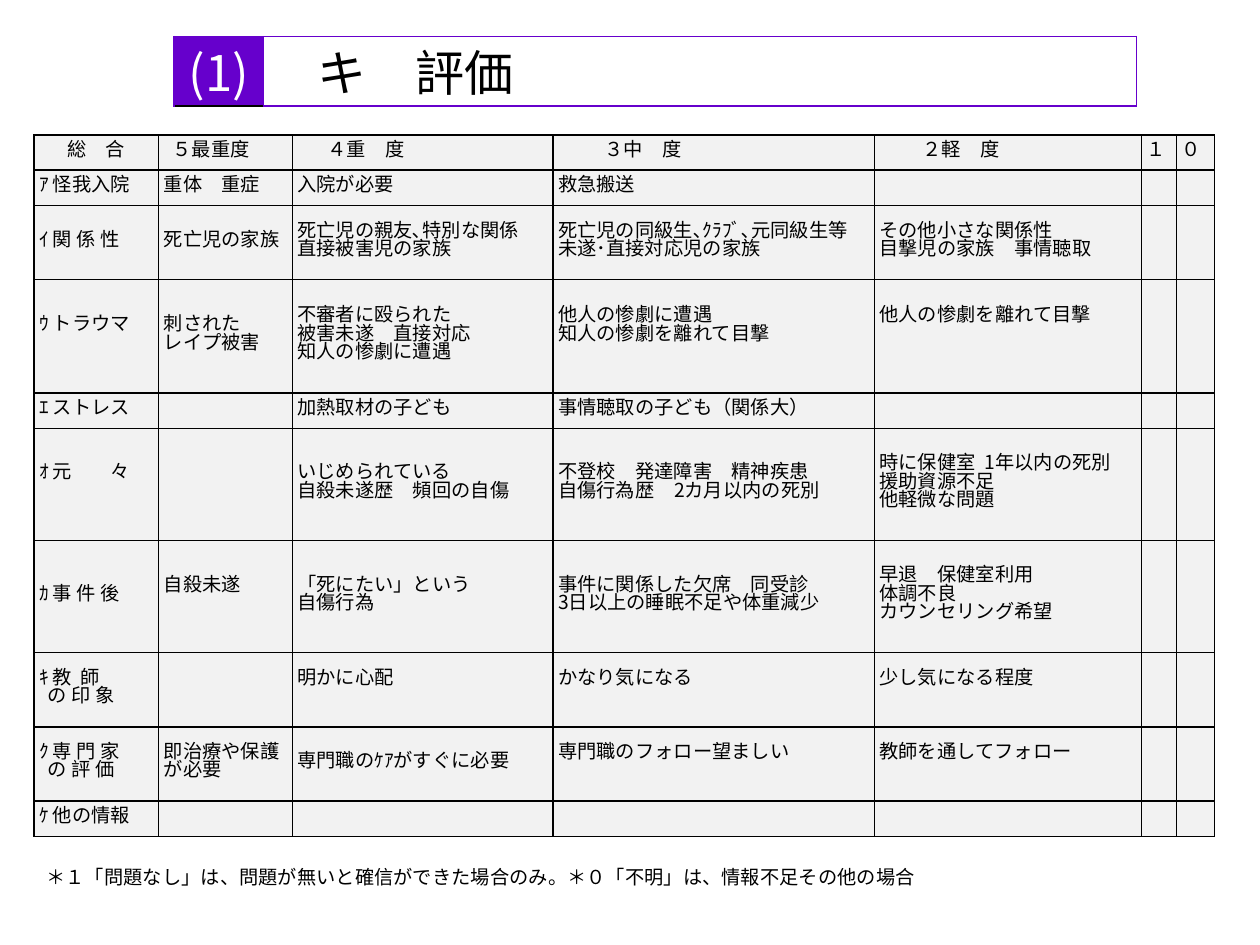
"""Build a slide with a heading band, a severity rating table and a footnote."""
from lxml.etree import SubElement
from pptx import Presentation
from pptx.dml.color import RGBColor
from pptx.enum.text import MSO_ANCHOR, PP_ALIGN
from pptx.oxml.ns import qn
from pptx.util import Inches, Pt

HUE = {"ink": "000000", "band": "6600CC", "pale": "F2F2F2", "white": "FFFFFF"}
CJK = "Noto Sans CJK JP"
LINE = 10.4
PAD = 0.04

HEAD = ["(1)", "キ　評価"]
ROWS = [
    ["総　合", "５最重度", "４重　度", "３中　度", "２軽　度", "１", "０"],
    ["ｱ 怪我入院", "重体　重症", "入院が必要", "救急搬送"],
    ["ｲ 関 係 性", "死亡児の家族", "死亡児の親友､特別な関係\n直接被害児の家族",
     "死亡児の同級生､ｸﾗﾌﾞ､元同級生等\n未遂･直接対応児の家族",
     "その他小さな関係性\n目撃児の家族　事情聴取"],
    ["ｳ トラウマ", "刺された\nレイプ被害",
     "不審者に殴られた\n被害未遂　直接対応\n知人の惨劇に遭遇",
     "他人の惨劇に遭遇\n知人の惨劇を離れて目撃", "他人の惨劇を離れて目撃"],
    ["ｴ ストレス", "", "加熱取材の子ども", "事情聴取の子ども（関係大）"],
    ["ｵ 元　　々", "", "いじめられている\n自殺未遂歴　頻回の自傷",
     "不登校　発達障害　精神疾患\n自傷行為歴　2カ月以内の死別",
     "時に保健室  1年以内の死別\n援助資源不足\n他軽微な問題"],
    ["ｶ 事 件 後", "自殺未遂", "「死にたい」という\n自傷行為",
     "事件に関係した欠席　同受診\n3日以上の睡眠不足や体重減少",
     "早退　保健室利用\n体調不良\nカウンセリング希望"],
    ["ｷ 教  師\nの 印 象", "", "明かに心配", "かなり気になる", "少し気になる程度"],
    ["ｸ 専 門 家\nの 評 価", "即治療や保護が必要", "専門職のｹｱがすぐに必要",
     "専門職のフォロー望ましい", "教師を通してフォロー"],
    ["ｹ 他の情報"],
]
NOTE = "＊１「問題なし」は、問題が無いと確信ができた場合のみ。＊０「不明」は、情報不足その他の場合"
WIDE = [0.99, 1.06, 2.07, 2.55, 2.12, 0.28, 0.3]
TALL = [0.28, 0.28, 0.59, 0.9, 0.28, 0.89, 0.89, 0.59, 0.59, 0.28]
DENT = {"５最重度": 0.07, "４重　度": 0.24, "３中　度": 0.37, "２軽　度": 0.34,
        "の 印 象": 0.07, "の 評 価": 0.07}
LIFT = {(3, 0): 1, (3, 3): 1, (3, 4): 2, (5, 0): 1, (6, 1): 1,
        (7, 2): 1, (7, 3): 1, (7, 4): 1, (8, 3): 1, (8, 4): 1}


def color(name):
    return RGBColor.from_string(HUE[name])


def style(para, size, face, ink="ink"):
    para.font.size = Pt(size)
    para.font.name = face
    para.font.color.rgb = color(ink)


def paint(cell, fill, edges):
    cell.fill.solid()
    cell.fill.fore_color.rgb = color(fill)
    props = cell._tc.get_or_add_tcPr()
    for spot, (side, edge) in enumerate(zip("LRTB", edges)):
        line = SubElement(props, qn("a:ln" + side), w=str(Pt(1)))
        solid = SubElement(line, qn("a:solidFill"))
        SubElement(solid, qn("a:srgbClr"), val=HUE[edge])
        props.insert(spot, line)


def grid(slide, left, top, wide, tall):
    frame = slide.shapes.add_table(len(tall), len(wide), Inches(left), Inches(top),
                                   Inches(sum(wide)), Inches(sum(tall)))
    table = frame.table
    table.first_row = table.horz_banding = False
    for col, size in zip(table.columns, wide):
        col.width = Inches(size)
    for row, size in zip(table.rows, tall):
        row.height = Inches(size)
    for cell in table.iter_cells():
        cell.margin_left = cell.margin_right = Inches(PAD)
        cell.margin_top = cell.margin_bottom = 0
    return table


def rate(slide):
    table = grid(slide, 0.27, 1.07, WIDE, TALL)
    for r, row in enumerate(ROWS):
        for c in range(len(WIDE)):
            cell = table.cell(r, c)
            cell.text = row[c] if c < len(row) else ""
            cell.vertical_anchor = MSO_ANCHOR.MIDDLE
            cell.margin_bottom = Pt(LINE * LIFT.get((r, c), 0))
            paint(cell, "pale", ["ink"] * 4)
            for para in cell.text_frame.paragraphs:
                para.line_spacing = Pt(LINE)
                if para.text in DENT:
                    props = para._p.get_or_add_pPr()
                    props.set("marL", str(Inches(DENT[para.text])))
                style(para, 11, CJK)
    table.cell(0, 0).text_frame.paragraphs[0].alignment = PP_ALIGN.CENTER


def head(slide):
    table = grid(slide, 1.38, 0.29, [0.71, 6.93], [0.55])
    looks = [("band", "white", CJK, ["band", "band", "band", "ink"]),
             ("white", "ink", "Arial", ["band"] * 4)]
    for c, (fill, ink, face, edges) in enumerate(looks):
        cell = table.cell(0, c)
        cell.text = HEAD[c]
        cell.vertical_anchor = MSO_ANCHOR.BOTTOM
        paint(cell, fill, edges)
        para = cell.text_frame.paragraphs[0]
        para.line_spacing = Pt(28)
        style(para, 28, face, ink)
    table.cell(0, 0).text_frame.paragraphs[0].alignment = PP_ALIGN.CENTER
    table.cell(0, 1).margin_left = Inches(PAD + 0.39)


def note(slide):
    box = slide.shapes.add_textbox(Inches(0.27), Inches(6.82), Inches(9.45), Inches(0.29))
    box.text_frame.word_wrap = True
    box.text_frame.text = NOTE
    style(box.text_frame.paragraphs[0], 11, "Arial")


def main():
    deck = Presentation()
    deck.slide_width, deck.slide_height = Inches(10), Inches(7.5)
    slide = deck.slides.add_slide(deck.slide_layouts[6])
    rate(slide)
    note(slide)
    head(slide)
    deck.save("out.pptx")


if __name__ == "__main__":
    main()
